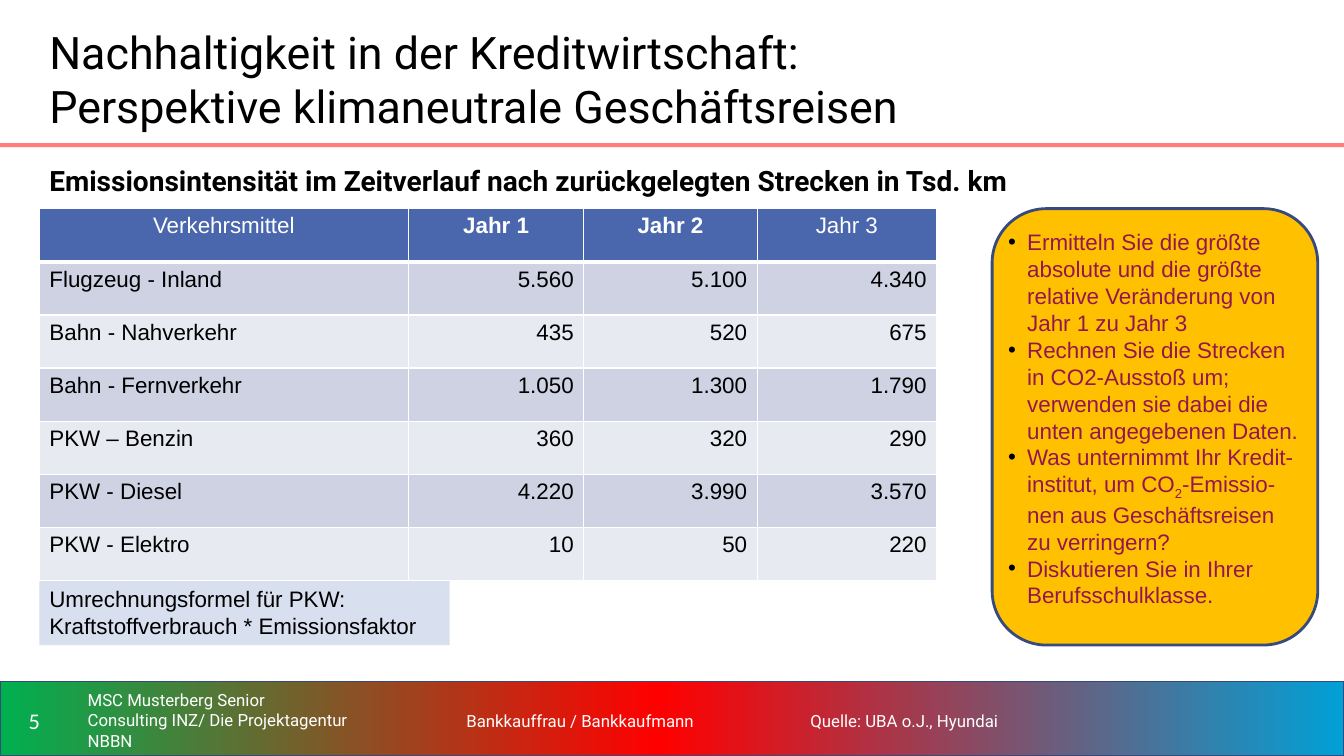
from copy import deepcopy

from lxml.etree import SubElement
from pptx import Presentation
from pptx.dml.color import RGBColor
from pptx.enum.shapes import MSO_SHAPE
from pptx.enum.text import MSO_ANCHOR, PP_ALIGN
from pptx.oxml import parse_xml
from pptx.oxml.ns import nsdecls, qn
from pptx.util import Inches, Pt

WIDE, HIGH = Inches(13.33), Inches(7.5)
COLORS = {
    "white": "FFFFFF", "black": "000000", "green": "00B050", "red": "FF0000",
    "cyan": "01A0D6", "navy": "364A7D", "coral": "FF7E79", "gold": "FFC000",
    "plum": "941651", "pale": "D8DFEF", "head": "4A66AC", "odd": "CED2E2",
    "even": "E8EAF1",
}
LEFT, RIGHT, CENTER = PP_ALIGN.LEFT, PP_ALIGN.RIGHT, PP_ALIGN.CENTER
MARGIN, TOP = 2.93, 27.6
WIDTHS = [27.46, 13.05, 12.9, 13.35]
ROW = 7.03
DATA = [
    ["Verkehrsmittel", "Jahr 1", "Jahr 2", "Jahr 3"],
    ["Flugzeug - Inland", "5.560", "5.100", "4.340"],
    ["Bahn - Nahverkehr", "435", "520", "675"],
    ["Bahn - Fernverkehr", "1.050", "1.300", "1.790"],
    ["PKW – Benzin", "360", "320", "290"],
    ["PKW - Diesel", "4.220", "3.990", "3.570"],
    ["PKW - Elektro", "10", "50", "220"],
]
TASKS = [
    ["Ermitteln Sie die größte absolute und die größte relative Veränderung von Jahr 1 zu Jahr 3"],
    ["Rechnen Sie die Strecken in CO2-Ausstoß um; verwenden sie dabei die unten angegebenen Daten."],
    ["Was unternimmt Ihr Kredit- institut, um CO", "2",
     "-Emissio- nen aus Geschäftsreisen zu verringern?"],
    ["Diskutieren Sie in Ihrer Berufsschulklasse."],
]


def color(name):
    return RGBColor.from_string(COLORS[name])


def across(share):
    return int(WIDE * share / 100)


def down(share):
    return int(HIGH * share / 100)


def place(x, y, w, h):
    return across(x), down(y), across(w), down(h)


def style(para, size, font, tint, bold=False, align=LEFT):
    para.alignment = align
    for run in para.runs:
        run.font.size = Pt(size)
        run.font.name = font
        run.font.bold = bold
        run.font.color.rgb = color(tint)


def shape(slide, kind, area, fill=None, line=None, width=1):
    item = slide.shapes.add_shape(kind, *place(*area))
    item.shadow.inherit = False
    if fill:
        item.fill.solid()
        item.fill.fore_color.rgb = color(fill)
    if line:
        item.line.color.rgb = color(line)
        item.line.width = Pt(width)
    else:
        item.line.fill.background()
    return item


def label(slide, area, text, size, font="Roboto", tint="black", bold=False,
          align=LEFT, anchor=MSO_ANCHOR.TOP, space=1.0):
    frame = slide.shapes.add_textbox(*place(*area)).text_frame
    frame.word_wrap = True
    frame.vertical_anchor = anchor
    frame.text = text
    para = frame.paragraphs[0]
    para.line_spacing = space
    style(para, size, font, tint, bold, align)


def blend(item, names, spots):
    item.fill.gradient()
    item.fill.gradient_angle = 0
    first = item._element.spPr.find(".//" + qn("a:gs"))
    first.addnext(deepcopy(first))
    for stop, name, spot in zip(item.fill.gradient_stops, names, spots):
        stop.color.rgb = color(name)
        stop.position = spot


def footer(slide):
    bar = shape(slide, MSO_SHAPE.RECTANGLE, (0, 90.13, 100, 9.87), line="navy")
    blend(bar, ["green", "red", "cyan"], [0, 0.49, 1])
    parts = [
        (0, 5.1, "5", 16, "Calibri", CENTER, 1.0),
        (5.78, 20.86, "MSC Musterberg Senior Consulting INZ/ Die Projektagentur NBBN",
         12, "Roboto", LEFT, 1.0),
        (27.46, 31.43, "Bankkauffrau / Bankkaufmann", 12, "Roboto", CENTER, 1.1),
        (59.56, 37.88, "Quelle: UBA o.J., Hyundai", 12, "Roboto", LEFT, 1.1),
    ]
    for x, w, text, size, font, align, space in parts:
        label(slide, (x, 91.2, w, 8.13), text, size, font, "white",
              align=align, anchor=MSO_ANCHOR.MIDDLE, space=space)


def border(cell, base):
    props = cell._tc.get_or_add_tcPr()
    for spot, side in enumerate(["lnL", "lnR", "lnT", "lnB"]):
        width = Pt(base if side == "lnB" else 1)
        props.insert(spot, parse_xml(
            f'<a:{side} {nsdecls("a")} w="{width}"><a:solidFill>'
            f'<a:srgbClr val="{COLORS["white"]}"/></a:solidFill></a:{side}>'))


def table(slide):
    area = (MARGIN, TOP, sum(WIDTHS), ROW * len(DATA))
    grid = slide.shapes.add_table(len(DATA), len(WIDTHS), *place(*area)).table
    for col, width in zip(grid.columns, WIDTHS):
        col.width = across(width)
    for r, values in enumerate(DATA):
        grid.rows[r].height = down(ROW)
        for c, value in enumerate(values):
            cell = grid.cell(r, c)
            cell.text = value
            cell.fill.solid()
            fill = "head" if r == 0 else "odd" if r % 2 else "even"
            cell.fill.fore_color.rgb = color(fill)
            border(cell, 1 if r else 3)
            align = CENTER if r == 0 else RIGHT if c else LEFT
            style(cell.text_frame.paragraphs[0], 16, "Arial",
                  "black" if r else "white", r == 0 and c in (1, 2), align)


def bullet(para):
    props = para._p.get_or_add_pPr()
    props.set("marL", str(Inches(0.19)))
    props.set("indent", str(-Inches(0.19)))
    tint = SubElement(props, qn("a:buClr"))
    SubElement(tint, qn("a:srgbClr")).set("val", COLORS["black"])
    SubElement(props, qn("a:buFont")).set("typeface", "Arial")
    SubElement(props, qn("a:buChar")).set("char", "•")


def tasks(slide):
    card = shape(slide, MSO_SHAPE.ROUNDED_RECTANGLE,
                 (73.82, TOP, 24.23, 57.73), "gold", "navy", 2)
    card.adjustments[0] = 0.167
    frame = card.text_frame
    frame.word_wrap = True
    frame.vertical_anchor = MSO_ANCHOR.TOP
    frame.margin_left = frame.margin_right = frame.margin_bottom = 0
    frame.margin_top = Inches(0.04)
    for spot, parts in enumerate(TASKS):
        para = frame.add_paragraph() if spot else frame.paragraphs[0]
        bullet(para)
        for part in parts:
            para.add_run().text = part
        style(para, 16, "Arial", "plum")
        for run in para.runs[1:2]:
            run._r.get_or_add_rPr().set("baseline", "-25000")


def note(slide):
    area = (MARGIN, 76.8, 30.53, 8.53)
    frame = shape(slide, MSO_SHAPE.RECTANGLE, area, "pale").text_frame
    frame.word_wrap = True
    frame.vertical_anchor = MSO_ANCHOR.TOP
    frame.text = "Umrechnungsformel für PKW:\nKraftstoffverbrauch * Emissionsfaktor"
    for para in frame.paragraphs:
        style(para, 16, "Arial", "black")


def main():
    deck = Presentation()
    deck.slide_width, deck.slide_height = WIDE, HIGH
    slide = deck.slides.add_slide(deck.slide_layouts[6])
    footer(slide)
    shape(slide, MSO_SHAPE.RECTANGLE, (0, 18.93, 100, 0.53), "coral")
    label(slide, (MARGIN, 2.67, 94.5, 15.73),
          "Nachhaltigkeit in der Kreditwirtschaft:\vPerspektive klimaneutrale Geschäftsreisen", 32)
    label(slide, (MARGIN, 20.93, 94.5, 5.87),
          "Emissionsintensität im Zeitverlauf nach zurückgelegten Strecken in Tsd. km",
          20, bold=True)
    tasks(slide)
    note(slide)
    table(slide)
    deck.save("out.pptx")


if __name__ == "__main__":
    main()
